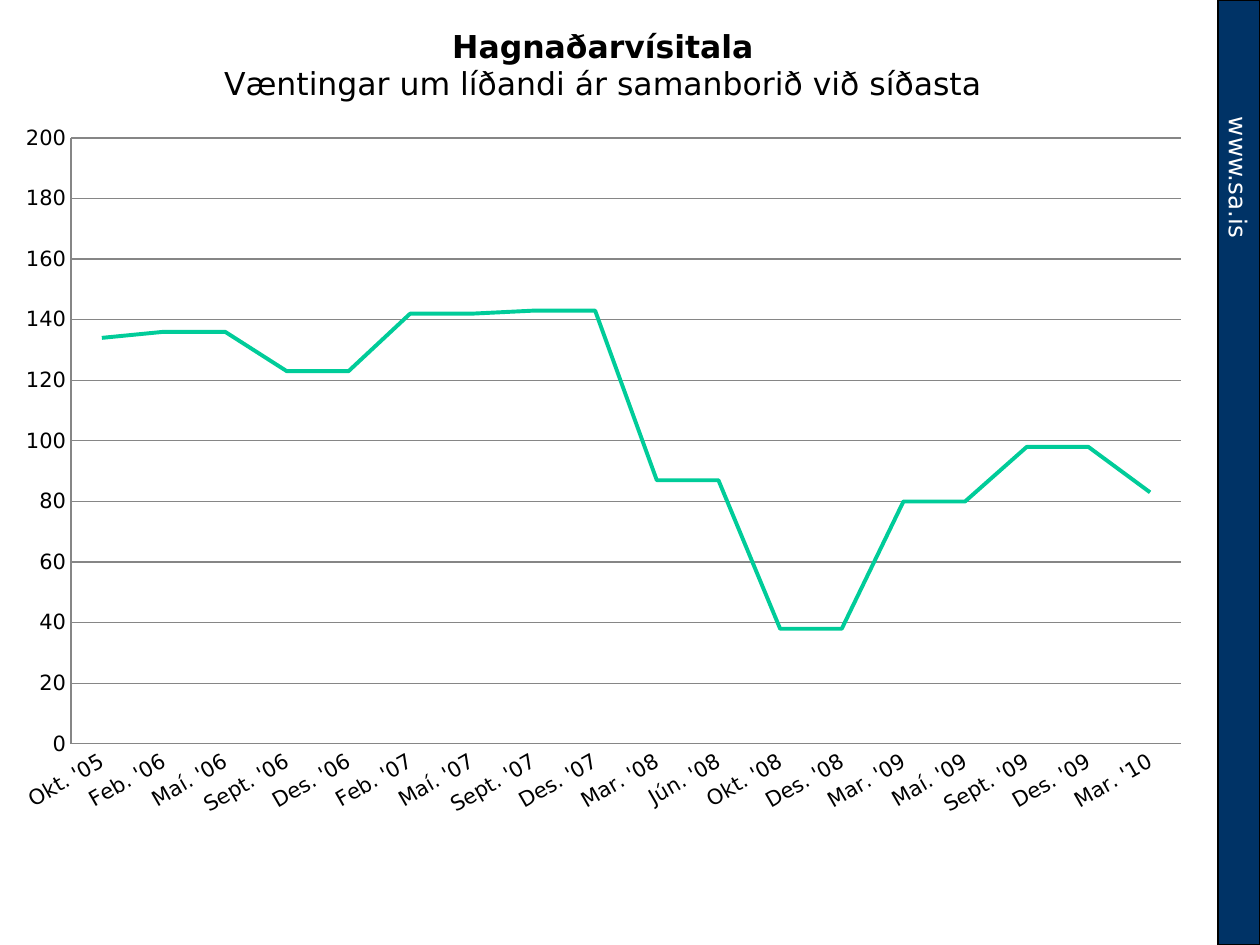
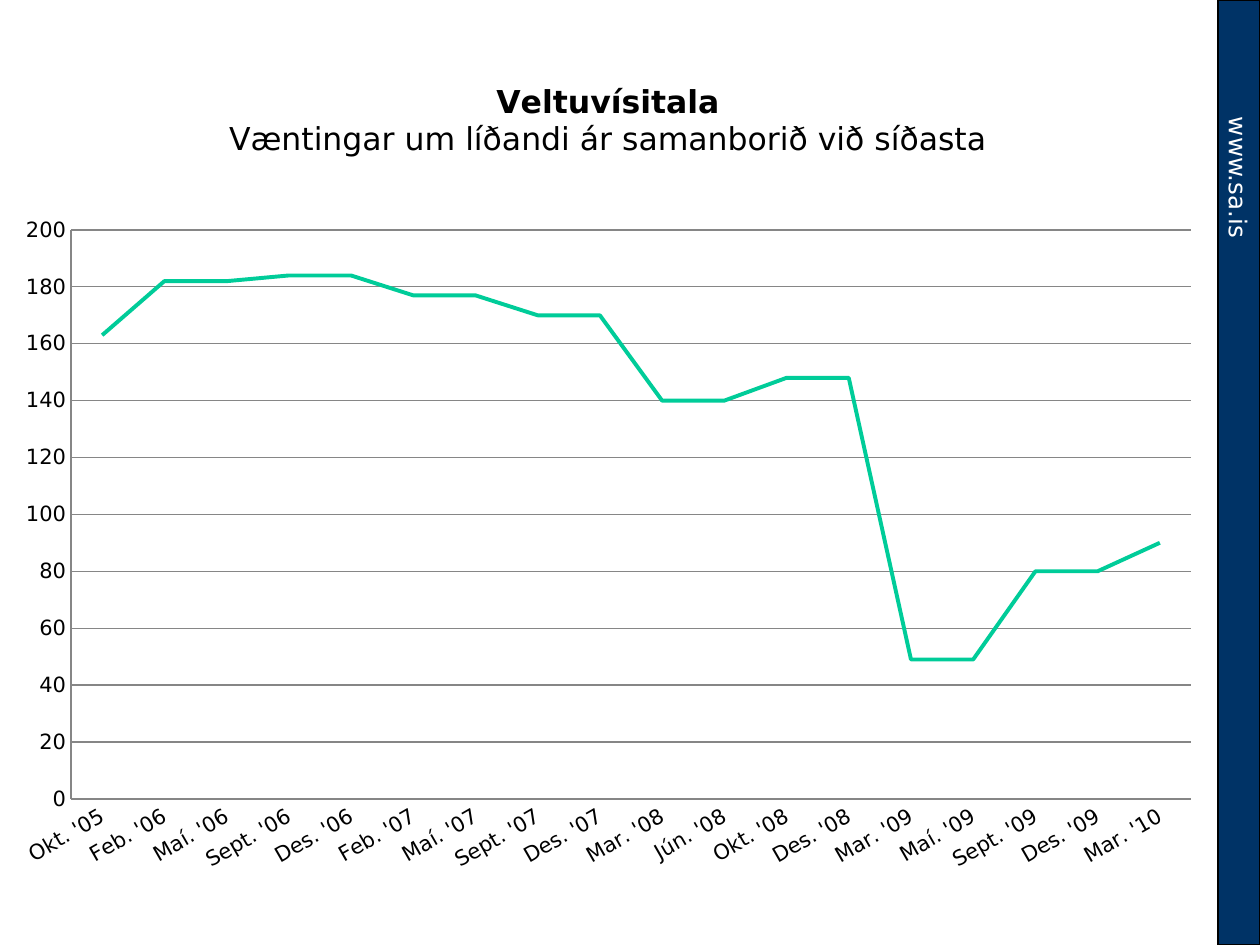
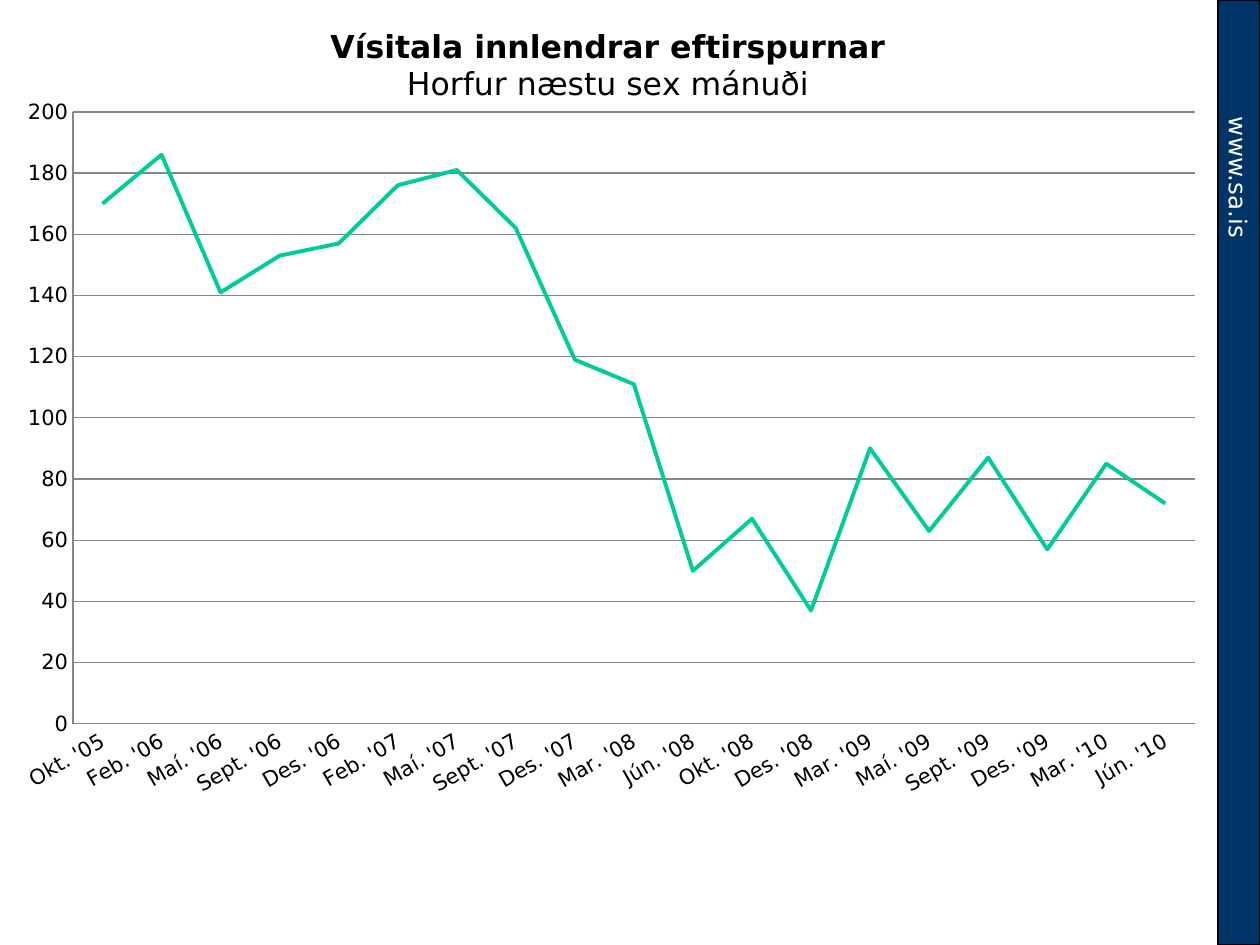
import dataclasses

import pptx
import pptx.chart.data
import pptx.dml.color
import pptx.enum.chart
import pptx.enum.shapes
import pptx.enum.text
import pptx.oxml
import pptx.oxml.ns
import pptx.util


@dataclasses.dataclass(frozen=True)
class Theme:
    """Colours, font and sizes shared by all slides."""

    font: str = "DejaVu Sans"
    black: str = "000000"
    white: str = "FFFFFF"
    navy: str = "003366"
    green: str = "00CC99"
    gray: str = "868686"
    title_size: int = 18
    address_size: int = 14
    axis_size: int = 12
    thin_line: float = 0.75
    series_line: float = 2.25


THEME = Theme()
PAGE_WIDTH, PAGE_HEIGHT = 1260, 945
BAND_LEFT = 1218
CHART_HEIGHT = 835
SURVEYS = [
    "Okt. '05", "Feb. '06", "Maí. '06", "Sept. '06", "Des. '06", "Feb. '07", "Maí. '07",
    "Sept. '07", "Des. '07", "Mar. '08", "Jún. '08", "Okt. '08", "Des. '08", "Mar. '09",
    "Maí. '09", "Sept. '09", "Des. '09", "Mar. '10", "Jún. '10",
]
THIS_YEAR = "Væntingar um líðandi ár samanborið við síðasta"


def px(length):
    """Turn pixels into EMU."""
    return pptx.util.Emu(round(length * 914400 / 126))


def rgb(value):
    """Turn a hex string into a colour."""
    return pptx.dml.color.RGBColor.from_string(value)


def format_font(font, size, color=THEME.black, bold=False):
    """Set the theme font with a size, colour and weight."""
    font.name = THEME.font
    font.size = pptx.util.Pt(size)
    font.bold = bold
    font.color.rgb = rgb(color)


def write_text(para, text, **style):
    """Add a formatted span of text to a paragraph."""
    span = para.add_run()
    span.text = text
    format_font(span.font, **style)


def format_line(line, color, width):
    """Set the colour and width of a line."""
    line.color.rgb = rgb(color)
    line.width = pptx.util.Pt(width)


def add_band(page):
    """Add the dark band at the right edge."""
    band = page.shapes.add_shape(
        pptx.enum.shapes.MSO_SHAPE.RECTANGLE,
        px(BAND_LEFT), 0, px(PAGE_WIDTH - BAND_LEFT), px(PAGE_HEIGHT))
    band.shadow.inherit = False
    band.fill.solid()
    band.fill.fore_color.rgb = rgb(THEME.navy)
    format_line(band.line, THEME.black, THEME.thin_line)
    return band


def add_address(page):
    """Add the web address that runs down the band."""
    box = page.shapes.add_textbox(px(1123), px(199), px(231), px(42))
    box.rotation = 90
    box.text_frame.word_wrap = True
    write_text(box.text_frame.paragraphs[0], "www.sa.is",
               size=THEME.address_size, color=THEME.white)
    return box


def share_on_layout(layout, shapes):
    """Move shapes to the layout so that every page shows them."""
    for shape in shapes:
        layout.shapes._spTree.append(shape._element)


def set_chart_title(chart, heading, subtitle):
    """Write a bold heading with a plain subtitle below it."""
    frame = chart.chart_title.text_frame
    write_text(frame.paragraphs[0], heading, size=THEME.title_size, bold=True)
    write_text(frame.add_paragraph(), subtitle, size=THEME.title_size)
    chart.chart_title.include_in_layout = False


def place_plot(chart, chart_width, left, top, right, bottom):
    """Fix the inner plot area, given in pixels within the chart."""
    shares = {
        "x": left / chart_width,
        "y": top / CHART_HEIGHT,
        "w": (right - left) / chart_width,
        "h": (bottom - top) / CHART_HEIGHT,
    }
    modes = '<c:layoutTarget val="inner"/><c:xMode val="edge"/><c:yMode val="edge"/>'
    values = "".join(f'<c:{name} val="{share:.4f}"/>' for name, share in shares.items())
    layout = pptx.oxml.parse_xml(
        f'<c:layout {pptx.oxml.ns.nsdecls("c")}>'
        f"<c:manualLayout>{modes}{values}</c:manualLayout></c:layout>")
    plot_area = chart._chartSpace.chart.plotArea
    for old_layout in plot_area.findall(pptx.oxml.ns.qn("c:layout")):
        plot_area.remove(old_layout)
    plot_area.insert(0, layout)


def format_axes(chart):
    """Set the scale, gridlines and slanted date labels."""
    for axis in (chart.category_axis, chart.value_axis):
        axis.major_tick_mark = pptx.enum.chart.XL_TICK_MARK.NONE
        axis.minor_tick_mark = pptx.enum.chart.XL_TICK_MARK.NONE
        format_line(axis.format.line, THEME.gray, THEME.thin_line)
        format_font(axis.tick_labels.font, THEME.axis_size)
    scale = chart.value_axis
    scale.minimum_scale, scale.maximum_scale, scale.major_unit = 0, 200, 20
    scale.tick_labels.number_format = "0"
    scale.tick_labels.number_format_is_linked = False
    format_line(scale.major_gridlines.format.line, THEME.gray, THEME.thin_line)
    labels = chart.category_axis._element.find(pptx.oxml.ns.qn("c:txPr"))
    labels.find(pptx.oxml.ns.qn("a:bodyPr")).set("rot", str(-30 * 60000))


def add_index_chart(page, heading, subtitle, values, *, width, plot, top=0):
    """Add a titled line chart of one index."""
    data = pptx.chart.data.CategoryChartData(number_format="0")
    data.categories = SURVEYS[:len(values)]
    data.add_series("Series 1", values)
    chart = page.shapes.add_chart(
        pptx.enum.chart.XL_CHART_TYPE.LINE, 0, px(top), px(width), px(CHART_HEIGHT), data).chart
    format_font(chart.font, THEME.axis_size)
    chart.has_legend = False
    chart.plots[0].vary_by_categories = False
    series = chart.plots[0].series[0]
    series.smooth = False
    series.marker.style = pptx.enum.chart.XL_MARKER_STYLE.NONE
    format_line(series.format.line, THEME.green, THEME.series_line)
    set_chart_title(chart, heading, subtitle)
    format_axes(chart)
    place_plot(chart, width, *plot)


def main():
    """Build the deck of three index charts."""
    deck = pptx.Presentation()
    deck.slide_width, deck.slide_height = px(PAGE_WIDTH), px(PAGE_HEIGHT)
    layout = deck.slide_layouts.get_by_name("Blank")
    profit, turnover, demand = [deck.slides.add_slide(layout) for _ in range(3)]
    share_on_layout(layout, [add_band(profit), add_address(profit)])
    add_index_chart(
        profit, "Hagnaðarvísitala", THIS_YEAR,
        [134, 136, 136, 123, 123, 142, 142, 143, 143, 87, 87, 38, 38, 80, 80, 98, 98, 83],
        width=1206, plot=(71, 138, 1181, 744))
    add_index_chart(
        turnover, "Veltuvísitala", THIS_YEAR,
        [163, 182, 182, 184, 184, 177, 177, 170, 170, 140, 140, 148, 148, 49, 49, 80, 80, 90],
        width=1216, plot=(71, 175, 1191, 744), top=55)
    add_index_chart(
        demand, "Vísitala innlendrar eftirspurnar", "Horfur næstu sex mánuði",
        [170, 186, 141, 153, 157, 176, 181, 162, 119, 111, 50, 67, 37, 90, 63, 87, 57, 85, 72],
        width=1216, plot=(73, 112, 1195, 724))
    deck.save("out.pptx")


if __name__ == "__main__":
    main()
